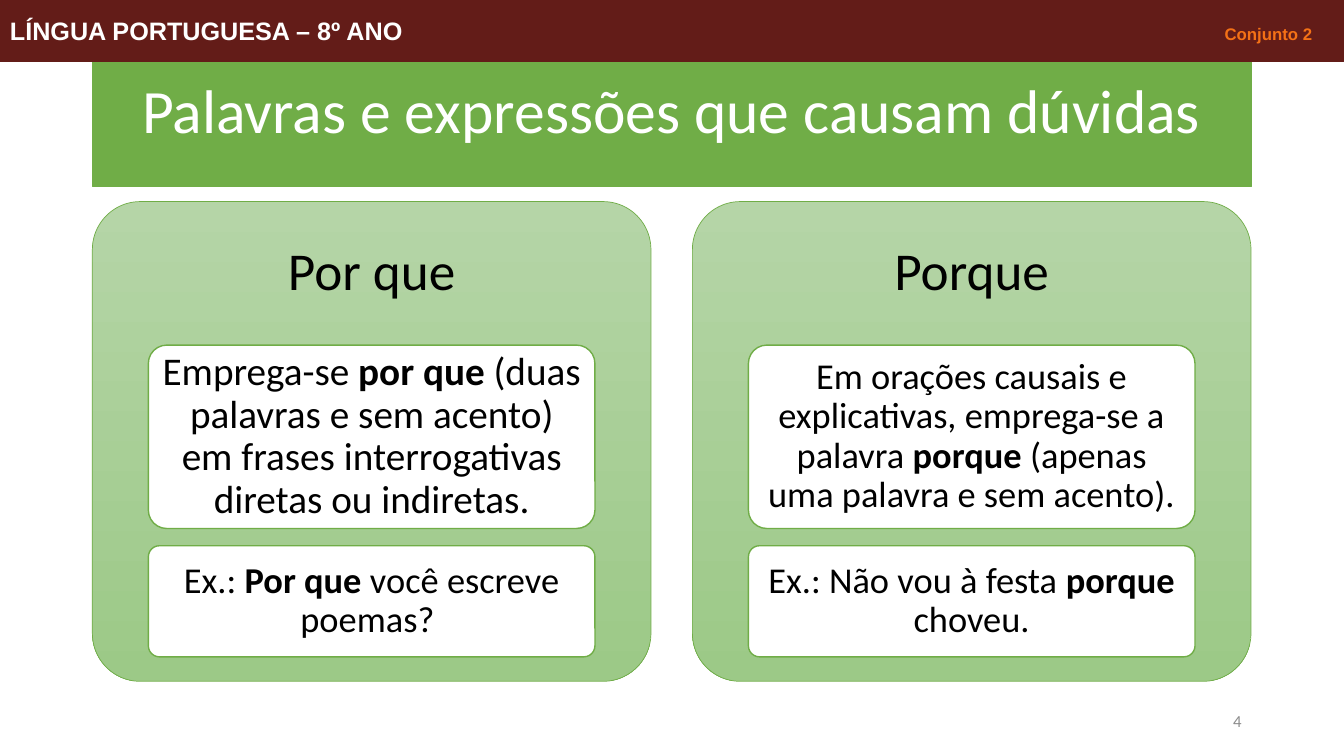
from pptx import Presentation
from pptx.dml.color import RGBColor
from pptx.enum.shapes import MSO_SHAPE as Shape
from pptx.enum.text import MSO_ANCHOR as Anchor, MSO_AUTO_SIZE as AutoSize, PP_ALIGN as Align
from pptx.util import Pt

GREEN = "70AD47"
MAROON = "631C18"
WHITE = "FFFFFF"
BLACK = "000000"


def paint(shape, fill, line, width):
    shape.shadow.inherit = False
    if fill:
        shape.fill.solid()
        shape.fill.fore_color.rgb = RGBColor.from_string(fill)
    shape.line.color.rgb = RGBColor.from_string(line)
    shape.line.width = Pt(width)


def write(shape, runs, size, color, align=Align.CENTER, font="Calibri", inset=7.2, spacing=0.9):
    """Fill a shape with one paragraph of (text, bold) runs."""
    frame = shape.text_frame
    frame.word_wrap = True
    frame.auto_size = AutoSize.NONE
    frame.vertical_anchor = Anchor.MIDDLE
    frame.margin_left = frame.margin_right = Pt(inset)
    frame.margin_top = frame.margin_bottom = Pt(3.6)
    paragraph = frame.paragraphs[0]
    paragraph.alignment = align
    paragraph.line_spacing = spacing
    for text, bold in runs:
        run = paragraph.add_run()
        run.text = text
        run.font.name = font
        run.font.size = Pt(size)
        run.font.bold = bold
        run.font.color.rgb = RGBColor.from_string(color)


presentation = Presentation()
presentation.slide_width = Pt(960)
presentation.slide_height = Pt(540)
slide = presentation.slides.add_slide(presentation.slide_layouts[5])
shapes = slide.shapes

# Title
title = shapes.title
title.left, title.top, title.width, title.height = Pt(66), Pt(28.8), Pt(828), Pt(104.4)
paint(title, GREEN, GREEN, 1)
write(title, [("Palavras e expressões que causam dúvidas", False)], 44, WHITE)

# Two panels, each with a heading, a rule card and an example card
panels = [
    ("Por que", 28,
     [("Emprega-se ", False), ("por que ", True),
      ("(duas palavras e sem acento) em frases interrogativas diretas ou indiretas.", False)],
     [("Ex.: ", False), ("Por que", True), (" você escreve poemas? ", False)]),
    ("Porque", 26,
     [("Em orações causais e explicativas, emprega-se a palavra ", False), ("porque", True),
      (" (apenas uma palavra e sem acento).", False)],
     [("Ex.: Não vou à festa ", False), ("porque", True), (" choveu.", False)]),
]
PANEL_TOP, PANEL_WIDTH, PANEL_STEP = 144, 399, 428.6
CARD_WIDTH = 319

for index, (heading, rule_size, rule, example) in enumerate(panels):
    left = 66 + index * PANEL_STEP
    panel = shapes.add_shape(Shape.ROUNDED_RECTANGLE, Pt(left), Pt(PANEL_TOP), Pt(PANEL_WIDTH), Pt(342.7))
    panel.adjustments[0] = 0.1
    panel.fill.gradient()
    panel.fill.gradient_angle = 270
    for stop, color in zip(panel.fill.gradient_stops, ("B5D5A7", "9CC987")):
        stop.color.rgb = RGBColor.from_string(color)
    paint(panel, None, GREEN, 0.5)

    heading_box = shapes.add_textbox(Pt(left), Pt(PANEL_TOP), Pt(PANEL_WIDTH), Pt(103))
    write(heading_box, [(heading, False)], 38, BLACK)

    card_left = left + (PANEL_WIDTH - CARD_WIDTH) / 2
    for top, height, size, runs in ((246.5, 131, rule_size, rule), (389.8, 79.4, 26, example)):
        card = shapes.add_shape(Shape.ROUNDED_RECTANGLE, Pt(card_left), Pt(top), Pt(CARD_WIDTH), Pt(height))
        card.adjustments[0] = 0.1
        paint(card, WHITE, GREEN, 1)
        write(card, runs, size, BLACK, inset=5.5)

# Slide number
number_box = shapes.add_textbox(Pt(678), Pt(500.4), Pt(216), Pt(28.8))
write(number_box, [("4", False)], 12, "8C8C8C", Align.RIGHT, spacing=1)

# Header band
header = shapes.add_shape(Shape.RECTANGLE, Pt(0), Pt(0), Pt(960), Pt(44))
paint(header, MAROON, MAROON, 0.75)
write(header, [("LÍNGUA PORTUGUESA – 8º ANO", True)], 18, WHITE, Align.LEFT, "Arial", spacing=1)
set_label = shapes.add_textbox(Pt(800), Pt(2), Pt(144.5), Pt(44))
write(set_label, [("Conjunto 2", True)], 12, "F47116", Align.RIGHT, "Arial", spacing=1)

presentation.save("out.pptx")
